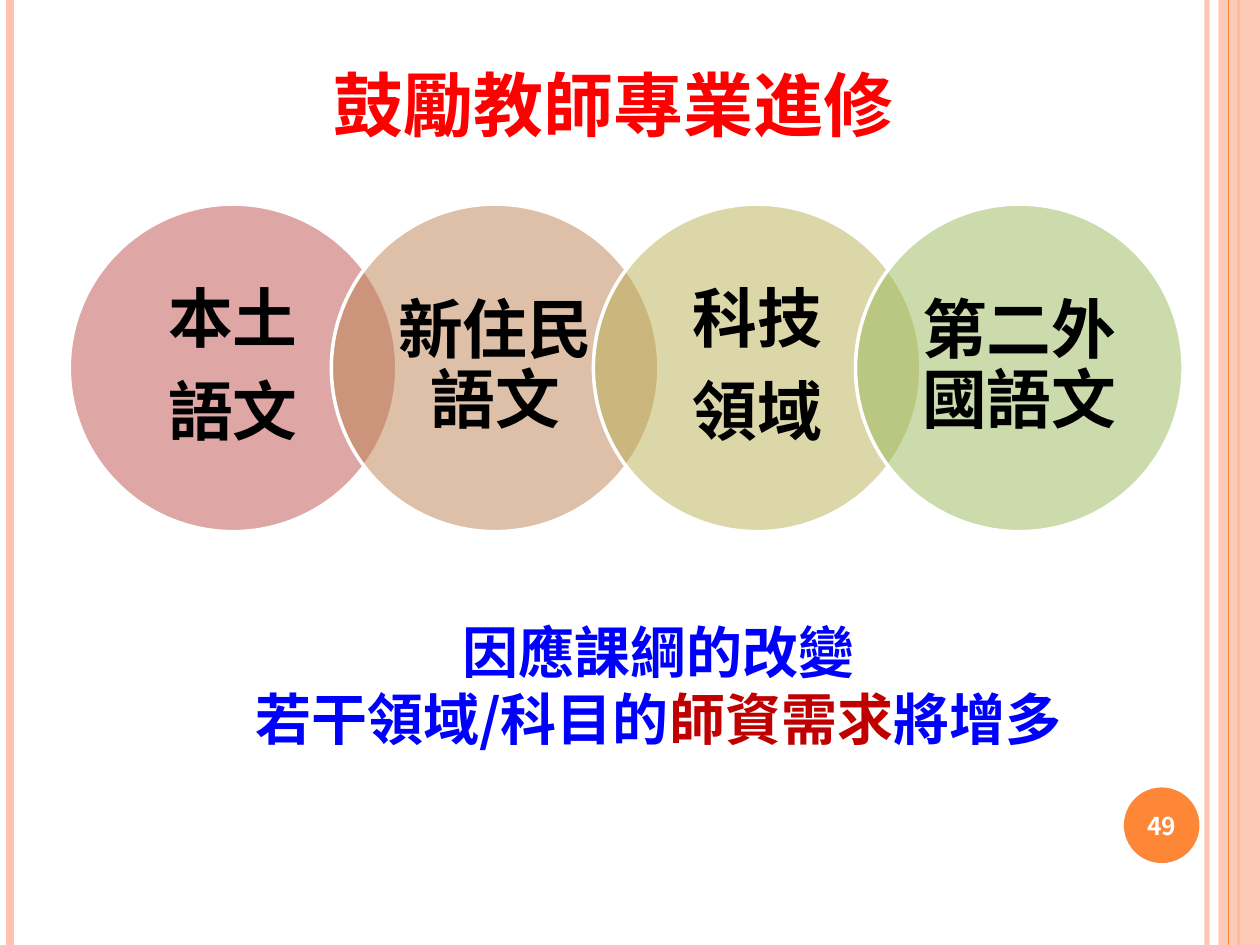
from lxml import etree
from pptx import Presentation
from pptx import util as u
from pptx.dml.color import RGBColor
from pptx.enum import shapes, text
from pptx.oxml.ns import qn

FONT = "Noto Sans CJK SC"
TITLE = "鼓勵教師專業進修"
FIELDS = [
    (["本土", "語文"], "BF504D"),
    (["新住民語文"], "BC8250"),
    (["科技", "領域"], "BBB054"),
    (["第二外國語文"], "99B958"),
]
MESSAGE = [
    [("因應課綱的改變", "0000FF")],
    [("若干領域/科目的", "0000FF"), ("師資需求", "C00000"), ("將增多", "0000FF")],
]
PAGE = "49"
RULES = [
    (9.58, "FEC3AE", 3, 93),
    (0.08, "FEC3AE", 4.5, 100),
    (9.83, "FE8637", 1.5, 100),
    (9.75, "FE8637", 0.75, 100),
]
BAND = (9.67, 0, 0.33, 7.5)
BADGE = (8.92, 6.25, 0.6, 0.6)
CIRCLE_LEFT, CIRCLE_TOP, CIRCLE_SIZE, CIRCLE_STEP = 0.55, 1.62, 2.6, 2.08


def paint(fill, color, alpha=100):
    """Give a fill a solid hex colour with an opacity in percent."""
    fill.solid()
    fill.fore_color.rgb = RGBColor.from_string(color)
    if alpha < 100:
        clr = fill._xPr.find(qn("a:solidFill"))[0]
        etree.SubElement(clr, qn("a:alpha"), val=str(alpha * 1000))


def add_rule(s, x, color, width, alpha):
    """Draw a full-height vertical line."""
    ln = s.shapes.add_connector(shapes.MSO_CONNECTOR.STRAIGHT, u.Inches(x), 0,
                                u.Inches(x), u.Inches(7.5))
    ln.line.width = u.Pt(width)
    paint(ln.line.fill, color, alpha)
    etree.SubElement(ln._element.spPr, qn("a:effectLst"))


def add_shape(s, kind, box, color, alpha=100):
    """Add a flat preset shape without an outline."""
    sp = s.shapes.add_shape(kind, *map(u.Inches, box))
    sp.shadow.inherit = False
    paint(sp.fill, color, alpha)
    sp.line.fill.background()
    return sp


def write(sp, paragraphs, size, align, anchor, margins=(0.1, 0.05),
          spacing=None, before=0):
    """Fill a shape with paragraphs made of (text, colour) runs."""
    tf = sp.text_frame
    tf.word_wrap = True
    tf.vertical_anchor = anchor
    tf.margin_left = tf.margin_right = u.Inches(margins[0])
    tf.margin_top = tf.margin_bottom = u.Inches(margins[1])
    for i, runs in enumerate(paragraphs):
        p = tf.add_paragraph() if i else tf.paragraphs[0]
        p.alignment = align
        p.line_spacing = spacing
        p.space_before = u.Pt(before if i else 0)
        for words, color in runs:
            r = p.add_run()
            r.text = words
            r.font.size = u.Pt(size)
            r.font.bold = True
            r.font.color.rgb = RGBColor.from_string(color)
            r.font.name = FONT
            etree.SubElement(r._r.get_or_add_rPr(), qn("a:ea"), typeface=FONT)


def main():
    """Build the slide and save it."""
    prs = Presentation()
    prs.slide_width, prs.slide_height = u.Inches(10), u.Inches(7.5)
    s = prs.slides.add_slide(prs.slide_layouts[5])
    left, center = text.PP_ALIGN.LEFT, text.PP_ALIGN.CENTER
    top, middle = text.MSO_ANCHOR.TOP, text.MSO_ANCHOR.MIDDLE
    oval = shapes.MSO_SHAPE.OVAL

    for rule in RULES[:3]:
        add_rule(s, *rule)
    add_shape(s, shapes.MSO_SHAPE.RECTANGLE, BAND, "FEC3AE", 87)
    add_rule(s, *RULES[3])

    badge = add_shape(s, oval, BADGE, "FE8637")
    write(badge, [[(PAGE, "FFFFFF")]], 14, center, middle, (0, 0))

    message = s.shapes.add_textbox(*map(u.Inches, (0.77, 4.85, 8.91, 1.33)))
    write(message, MESSAGE, 32, center, top)

    for i, (lines, color) in enumerate(FIELDS):
        box = (CIRCLE_LEFT + i * CIRCLE_STEP, CIRCLE_TOP, CIRCLE_SIZE, CIRCLE_SIZE)
        circle = add_shape(s, oval, box, color, 50)
        paint(circle.line.fill, "FFFFFF")
        circle.line.width = u.Pt(2)
        write(circle, [[(line, "000000")] for line in lines], 37, center, middle,
              (0.14, 0.05), 0.9, 13)

    title = s.shapes.title
    title.left, title.top, title.width, title.height = map(
        u.Inches, (2.55, 0.44, 4.76, 0.77))
    write(title, [[(TITLE, "FF0000")]], 40, left, top)
    title.text_frame.auto_size = text.MSO_AUTO_SIZE.NONE

    prs.save("out.pptx")


if __name__ == "__main__":
    main()
